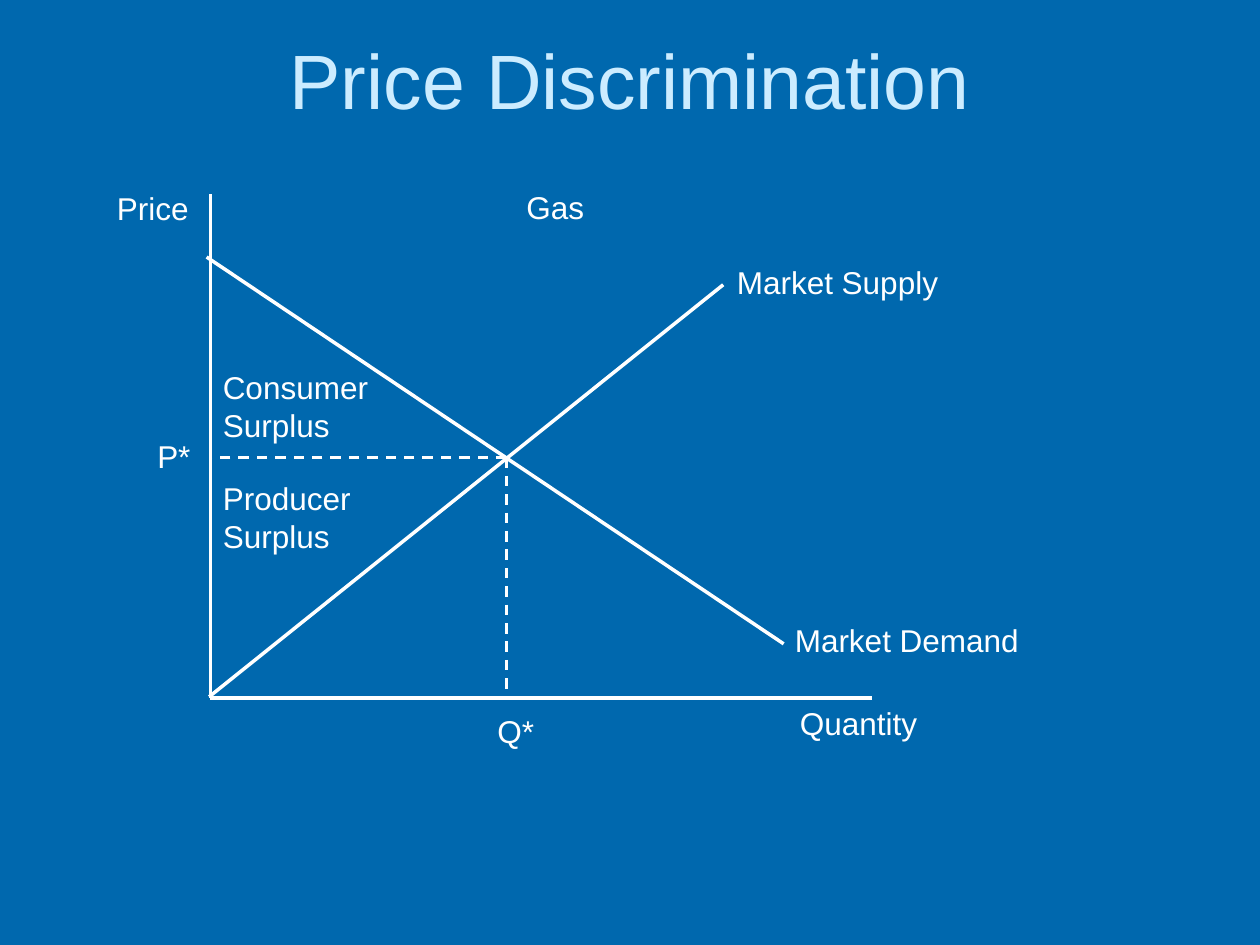
from lxml.etree import SubElement
from pptx import Presentation
from pptx.dml.color import RGBColor
from pptx.enum.dml import MSO_LINE
from pptx.enum.shapes import MSO_CONNECTOR
from pptx.enum.text import MSO_ANCHOR, PP_ALIGN
from pptx.oxml.ns import qn
from pptx.util import Inches, Pt

COLORS = {"background": "0068AE", "title": "CCECFF", "ink": "FFFFFF"}
FONT = "Arial"

presentation = Presentation()
presentation.slide_width, presentation.slide_height = Inches(10), Inches(7.5)
COLUMN = presentation.slide_width / 100
ROW = presentation.slide_height / 75

slide = presentation.slides.add_slide(presentation.slide_layouts[6])
slide.background.fill.solid()
slide.background.fill.fore_color.rgb = RGBColor.from_string(COLORS["background"])


def add_text(text, left, top, width, height=4, size=18, color="ink",
             align=PP_ALIGN.LEFT, anchor=MSO_ANCHOR.TOP):
    """Add a text box placed in grid columns and rows; newlines split paragraphs."""
    shape = slide.shapes.add_textbox(round(left * COLUMN), round(top * ROW),
                                     round(width * COLUMN), round(height * ROW))
    frame = shape.text_frame
    frame.word_wrap = True
    frame.vertical_anchor = anchor
    frame.text = text
    for paragraph in frame.paragraphs:
        paragraph.alignment = align
        paragraph.font.name = FONT
        paragraph.font.size = Pt(size)
        paragraph.font.color.rgb = RGBColor.from_string(COLORS[color])


def add_line(start, end, width=2, dash=None):
    """Join two (column, row) points with a straight line."""
    line = slide.shapes.add_connector(
        MSO_CONNECTOR.STRAIGHT, round(start[0] * COLUMN), round(start[1] * ROW),
        round(end[0] * COLUMN), round(end[1] * ROW))
    line.line.color.rgb = RGBColor.from_string(COLORS["ink"])
    line.line.width = Pt(width)
    if dash:
        line.line.dash_style = dash
    SubElement(line._element.spPr, qn("a:effectLst"))


add_text("Price Discrimination", 5, 0, 90, 12.5, size=44, color="title",
         align=PP_ALIGN.CENTER, anchor=MSO_ANCHOR.MIDDLE)

# Axes
origin = (16.7, 55.4)
add_line((origin[0], 15.4), origin)
add_line((69.2, origin[1]), origin)

# Demand and supply curves
add_line((16.4, 20.4), (62.2, 51.1))
add_line((57.4, 22.6), (16.6, 55.3))

# Guides from the equilibrium to both axes
equilibrium = (40.2, 36.3)
for axis_point in ((16.6, equilibrium[1]), (equilibrium[0], 55.5)):
    add_line(equilibrium, axis_point, width=1.5, dash=MSO_LINE.DASH)

labels = [
    ("Price", 8.3, 14.5, 10.8),
    ("Quantity", 62.5, 55.4, 12.5),
    ("Market Demand", 62.1, 48.8, 21.2),
    ("Market Supply", 57.5, 20.4, 20),
    ("Consumer Surplus", 16.7, 28.7, 20, 7.1),
    ("Producer\nSurplus", 16.7, 37.5, 20, 7.1),
    ("P*", 11.5, 34.2, 5.4),
    ("Q*", 38.5, 56, 5.4),
    ("Gas", 40.8, 14.4, 18.3),
]
for label in labels:
    add_text(*label)

presentation.save("out.pptx")
